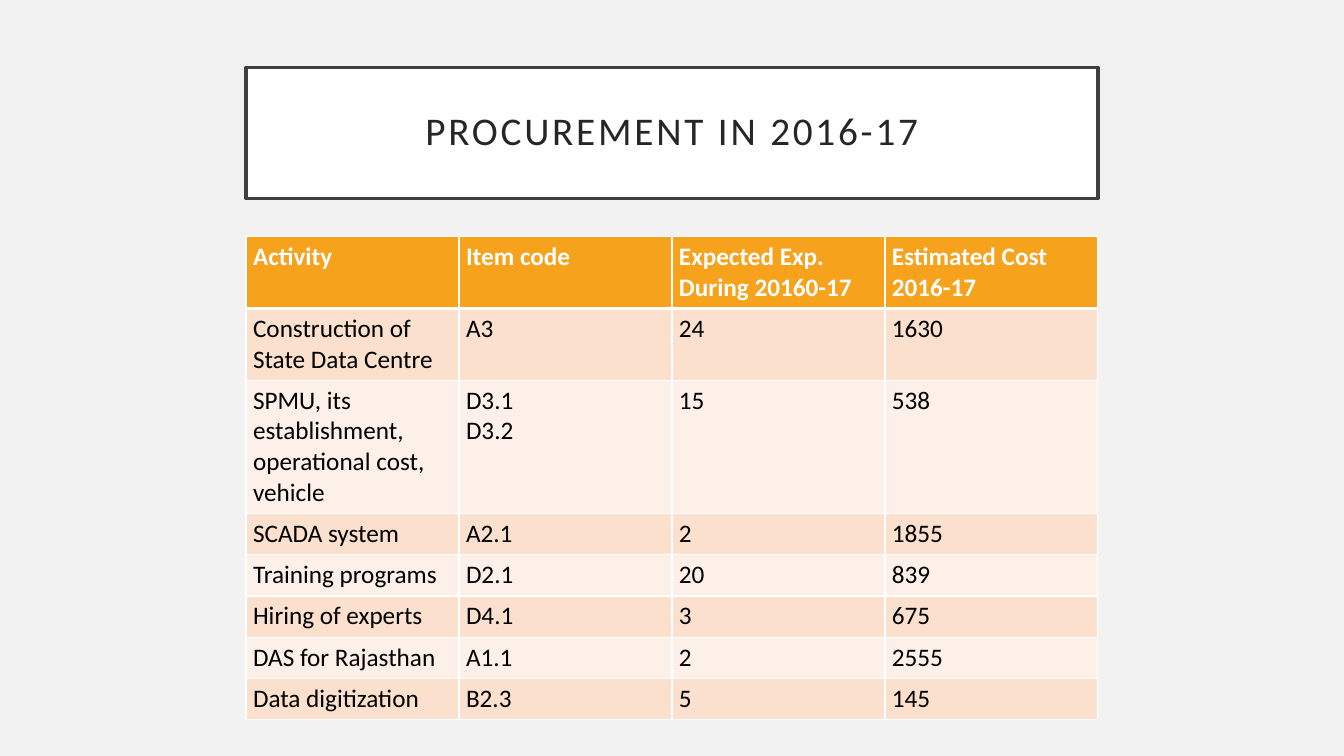
"""Build the slide listing procurement in 2016-17 as a titled table."""
import pptx
import pptx.dml.color
import pptx.enum.shapes
import pptx.enum.text
import pptx.oxml
import pptx.oxml.ns
import pptx.util

RGB = pptx.dml.color.RGBColor
Pt = pptx.util.Pt
Inches = pptx.util.Inches

WHITE = RGB(0xFF, 0xFF, 0xFF)
BLACK = RGB(0x00, 0x00, 0x00)
GREY = RGB(0xF2, 0xF2, 0xF2)
FRAME = RGB(0x40, 0x40, 0x40)
INK = RGB(0x26, 0x26, 0x26)
GOLD = RGB(0xF6, 0xA2, 0x1D)
PEACH = RGB(0xFB, 0xE0, 0xCD)
CREAM = RGB(0xFD, 0xF0, 0xE8)

ROWS = [
    ("Activity", "Item code", "Expected Exp. During 20160-17", "Estimated Cost 2016-17"),
    ("Construction of State Data Centre", "A3", "24", "1630"),
    ("SPMU, its establishment, operational cost, vehicle", "D3.1\nD3.2", "15", "538"),
    ("SCADA system", "A2.1", "2", "1855"),
    ("Training programs", "D2.1", "20", "839"),
    ("Hiring of experts", "D4.1", "3", "675"),
    ("DAS for Rajasthan", "A1.1", "2", "2555"),
    ("Data digitization", "B2.3", "5", "145"),
]
TALL = [0.71, 0.71, 1.32] + [0.41] * 5


def write(para, text, size, color, bold=False):
    run = para.add_run()
    run.text = text
    run.font.name = "Calibri"
    run.font.size = Pt(size)
    run.font.bold = bold
    run.font.color.rgb = color
    return run


def edge(cell, side, width):
    line = pptx.oxml.parse_xml(
        f'<a:ln{side} {pptx.oxml.ns.nsdecls("a")} w="{Pt(width)}">'
        f'<a:solidFill><a:srgbClr val="{WHITE}"/></a:solidFill></a:ln{side}>')
    cell._tc.get_or_add_tcPr().append(line)


deck = pptx.Presentation()
deck.slide_width = Inches(13.33)
deck.slide_height = Inches(7.5)
slide = deck.slides.add_slide(deck.slide_layouts[6])
slide.background.fill.solid()
slide.background.fill.fore_color.rgb = GREY

wide = Inches(8.45)
left = (deck.slide_width - wide) // 2

title = slide.shapes.add_shape(
    pptx.enum.shapes.MSO_SHAPE.RECTANGLE, left, Inches(0.67), wide, Inches(1.3))
title.shadow.inherit = False
title.fill.solid()
title.fill.fore_color.rgb = WHITE
title.line.color.rgb = FRAME
title.line.width = Pt(2.5)
frame = title.text_frame
frame.word_wrap = True
frame.vertical_anchor = pptx.enum.text.MSO_ANCHOR.MIDDLE
frame.margin_left = frame.margin_right = Inches(0.2)
frame.margin_top = frame.margin_bottom = Inches(0.2)
head = frame.paragraphs[0]
head.alignment = pptx.enum.text.PP_ALIGN.CENTER
head.line_spacing = 0.9
run = write(head, "PROCUREMENT IN 2016-17", 28, INK)
run.font._element.set("spc", "200")

table = slide.shapes.add_table(
    len(ROWS), len(ROWS[0]), left, Inches(2.35), wide, Inches(sum(TALL))).table
for row, high in zip(table.rows, TALL):
    row.height = Inches(high)

for r, texts in enumerate(ROWS):
    for c, text in enumerate(texts):
        cell = table.cell(r, c)
        cell.margin_left = cell.margin_right = Inches(0.07)
        cell.margin_top = cell.margin_bottom = Inches(0.05)
        for side in "LRTB":
            if r != 1 or side != "T":
                edge(cell, side, 3 if r == 0 and side == "B" else 1)
        cell.fill.solid()
        cell.fill.fore_color.rgb = GOLD if r == 0 else PEACH if r % 2 else CREAM
        para = cell.text_frame.paragraphs[0]
        for i, part in enumerate(text.split("\n")):
            if i:
                para.add_line_break()
            write(para, part, 18, BLACK if r else WHITE, r == 0)

deck.save("out.pptx")
